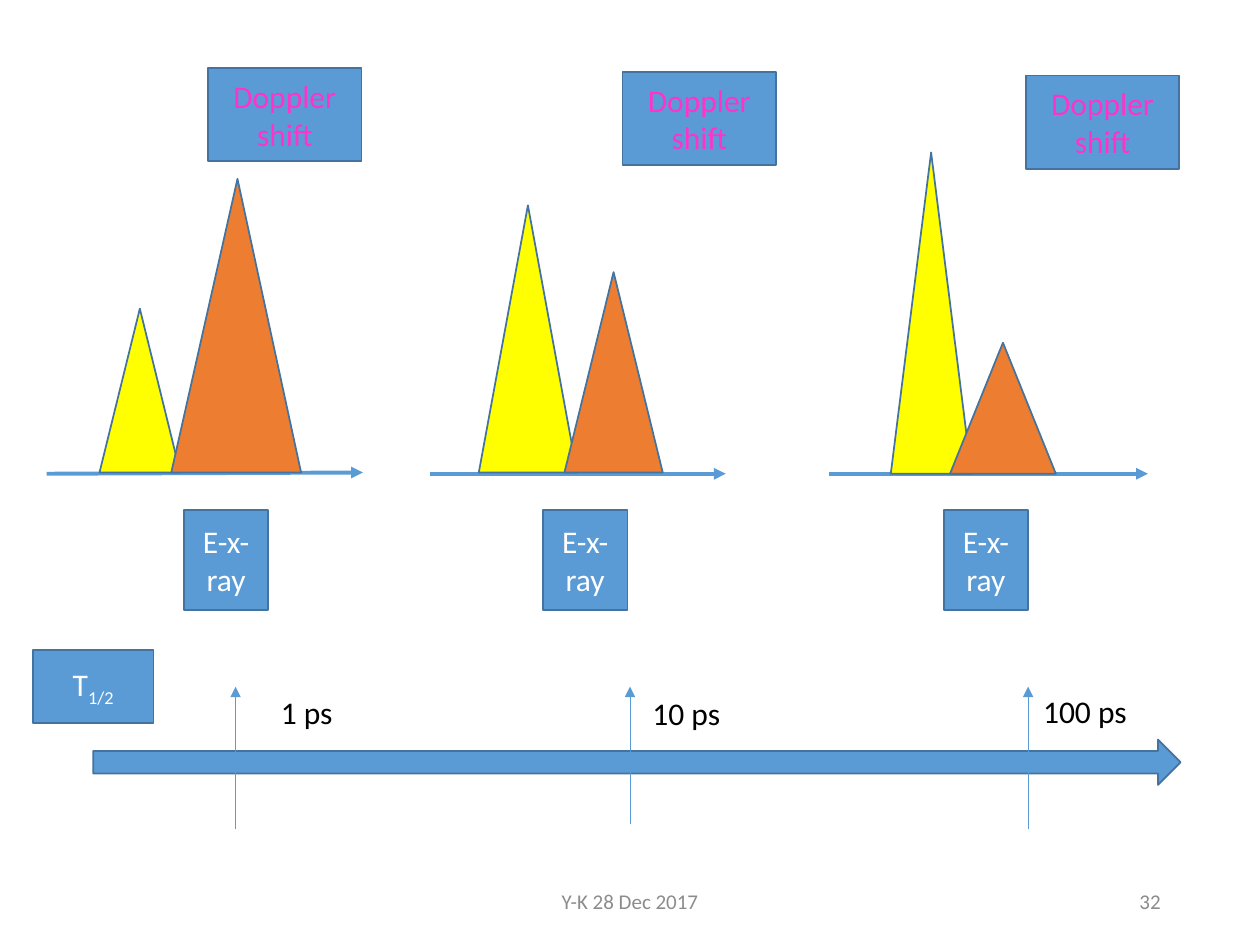
"""Build a slide of Doppler-shifted X-ray line shapes against level half-life."""
from dataclasses import dataclass

from lxml import etree
from pptx import Presentation
from pptx import util as u
from pptx.dml.color import RGBColor
from pptx.enum import shapes as sh, text as tx
from pptx.oxml.ns import qn

SCALE = 9144


@dataclass(frozen=True)
class Theme:
    blue: str = "5B9BD5"
    edge: str = "43739E"
    yellow: str = "FFFF00"
    orange: str = "ED7D31"
    pink: str = "FF33CC"
    white: str = "FFFFFF"
    black: str = "000000"
    gray: str = "8C8C8C"
    font: str = "Calibri"
    body: int = 18
    foot: int = 12


@dataclass(frozen=True)
class Box:
    left: int
    top: int
    width: int
    height: int

    def emu(self) -> list[int]:
        return [px(n) for n in (self.left, self.top, self.width, self.height)]


@dataclass(frozen=True)
class Peak:
    box: Box
    color: str
    apex: float = 0.5


@dataclass(frozen=True)
class Panel:
    axis: tuple[int, int, int, int]
    peaks: tuple[Peak, Peak]
    shift: Box
    ray: Box
    tick: tuple[int, int]
    time: str
    label: Box


T = Theme()

PANELS = (
    Panel((37, 376, 288, 375),
          (Peak(Box(79, 245, 64, 130), T.yellow), Peak(Box(136, 142, 103, 233), T.orange, 0.51)),
          Box(165, 54, 122, 74), Box(146, 405, 67, 79), (187, 658), "1 ps", Box(213, 545, 75, 40)),
    Panel((341, 376, 576, 376),
          (Peak(Box(380, 163, 78, 212), T.yellow), Peak(Box(448, 216, 78, 159), T.orange)),
          Box(494, 57, 122, 74), Box(431, 405, 67, 79), (500, 654), "10 ps", Box(508, 546, 75, 40)),
    Panel((658, 376, 911, 376),
          (Peak(Box(707, 121, 64, 255), T.yellow), Peak(Box(754, 272, 84, 104), T.orange)),
          Box(814, 60, 122, 74), Box(749, 405, 67, 79), (816, 658), "100 ps", Box(818, 544, 99, 40)),
)


def px(n: int) -> int:
    return u.Emu(n * SCALE)


def rgb(color: str) -> RGBColor:
    return RGBColor.from_string(color)


def write(shape, words: str, *, color: str = T.white, size: int = T.body,
          align=tx.PP_ALIGN.CENTER, anchor=tx.MSO_ANCHOR.MIDDLE, sub: str = "") -> None:
    """Write formatted text, with an optional subscript."""
    frame = shape.text_frame
    frame.word_wrap = True
    frame.vertical_anchor = anchor
    para = frame.paragraphs[0]
    para.alignment = align
    for part in filter(None, (words, sub)):
        run = para.add_run()
        run.text = part
        run.font.name, run.font.size = T.font, u.Pt(size)
        run.font.color.rgb = rgb(color)
    if sub:
        run.font._element.set("baseline", "-25000")


def block(slide, kind, box: Box, fill: str = T.blue):
    """Add an outlined preset shape."""
    shape = slide.shapes.add_shape(kind, *box.emu())
    shape.shadow.inherit = False
    shape.fill.solid()
    shape.fill.fore_color.rgb = rgb(fill)
    shape.line.color.rgb = rgb(T.edge)
    shape.line.width = u.Pt(1)
    return shape


def label(slide, box: Box, words: str, **style) -> None:
    """Add a plain text box."""
    write(slide.shapes.add_textbox(*box.emu()), words, **style)


def arrow(slide, ends: tuple[int, int, int, int], width: float) -> None:
    """Add a line with a triangular head at its end."""
    line = slide.shapes.add_connector(sh.MSO_CONNECTOR.STRAIGHT, *map(px, ends))
    line.line.color.rgb = rgb(T.blue)
    line.line.width = u.Pt(width)
    etree.SubElement(line.line._get_or_add_ln(), qn("a:tailEnd"), type="triangle")
    etree.SubElement(line._element.spPr, qn("a:effectLst"))


def spectrum(slide, panel: Panel) -> None:
    """Draw one pair of peaks on its axis, with both captions."""
    rect = sh.MSO_SHAPE.RECTANGLE
    arrow(slide, panel.axis, 2.25)
    for peak in panel.peaks:
        shape = block(slide, sh.MSO_SHAPE.ISOSCELES_TRIANGLE, peak.box, peak.color)
        shape.adjustments[0] = peak.apex
    write(block(slide, rect, panel.ray), "E-x-ray")
    write(block(slide, rect, panel.shift), "Doppler shift", color=T.pink)


def scale(slide) -> None:
    """Draw the half-life arrow with its ticks and times."""
    block(slide, sh.MSO_SHAPE.RIGHT_ARROW, Box(74, 587, 863, 36))
    write(block(slide, sh.MSO_SHAPE.RECTANGLE, Box(26, 516, 96, 58)), "T", sub="1/2")
    for panel in PANELS:
        x, foot = panel.tick
        arrow(slide, (x, foot, x, 545), 0.5)
        label(slide, panel.label, panel.time, color=T.black,
              align=tx.PP_ALIGN.LEFT, anchor=tx.MSO_ANCHOR.TOP)


def main() -> None:
    deck = Presentation()
    deck.slide_width, deck.slide_height = px(1000), px(750)
    slide = deck.slides.add_slide(deck.slide_layouts[6])
    label(slide, Box(331, 695, 338, 40), "Y-K 28 Dec 2017", color=T.gray, size=T.foot)
    label(slide, Box(706, 695, 225, 40), "32", color=T.gray, size=T.foot,
          align=tx.PP_ALIGN.RIGHT)
    for panel in PANELS:
        spectrum(slide, panel)
    scale(slide)
    deck.save("out.pptx")


if __name__ == "__main__":
    main()
